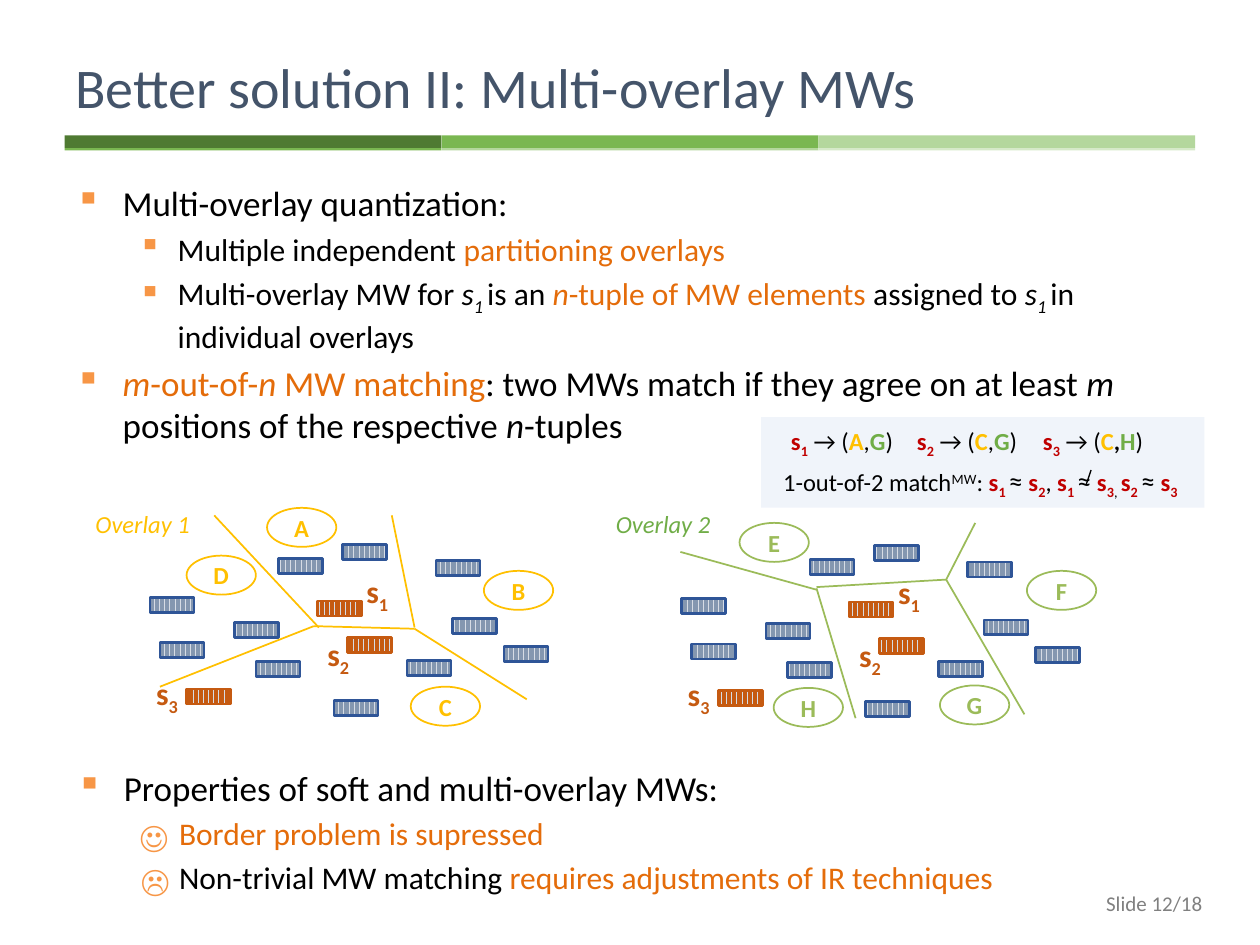
from lxml.etree import SubElement
from pptx import Presentation
from pptx.dml.color import RGBColor
from pptx.enum.dml import MSO_PATTERN
from pptx.enum.shapes import MSO_CONNECTOR, MSO_SHAPE
from pptx.enum.text import MSO_ANCHOR as ANCHOR, PP_ALIGN as ALIGN
from pptx.oxml.ns import qn
from pptx.util import Pt

ORANGE, BULLET, RUST = "E46C0A", "F79646", "C55A11"
GOLD, GREEN, OLIVE = "FFC000", "70AD47", "9BBB59"
STYLES = {
    "bold": {"bold": True},
    "italic": {"italic": True},
    "sub": {"baseline": "-25000"},
    "super": {"baseline": "30000"},
    "large": {"size": Pt(16)},
    "orange": {"colour": ORANGE},
    "red": {"colour": "C00000"},
    "gold": {"colour": GOLD},
    "green": {"colour": GREEN},
}


def paint(fill, colour):
    """Make the fill of a shape, line or font one solid colour."""
    fill.solid()
    fill.fore_color.rgb = RGBColor.from_string(colour)


def write(paragraph, runs, size, colour="000000"):
    """Add (text, style words) runs; the words are keys of STYLES."""
    for text, words in runs:
        run = paragraph.add_run()
        run.text = text
        values = {"name": "Calibri", "size": Pt(size), "colour": colour}
        for word in words.split():
            values.update(STYLES[word])
        paint(run.font.fill, values.pop("colour"))
        if "baseline" in values:
            run._r.get_or_add_rPr().set("baseline", values.pop("baseline"))
        for name, value in values.items():
            setattr(run.font, name, value)


presentation = Presentation()
presentation.slide_width, presentation.slide_height = Pt(720), Pt(540)
slide = presentation.slides.add_slide(presentation.slide_layouts[6])
shapes = slide.shapes

# Title rule: three segments, each with a thin lighter edge below
bar_width = 215.3
for column, (main, edge) in enumerate(
        [("4F7A32", "7AB751"), ("7AB751", "B4D79D"), ("B4D79D", "D6E9C9")]):
    for top, height, colour in [(77.4, 7.2, main), (84.6, 1.4, edge)]:
        bar = shapes.add_shape(MSO_SHAPE.RECTANGLE, Pt(37 + column * bar_width),
                               Pt(top), Pt(bar_width), Pt(height))
        bar.shadow.inherit = False
        paint(bar.fill, colour)
        bar.line.fill.background()

# Bulleted text
body = [
    (0, [("Multi-overlay quantization:", "")]),
    (1, [("Multiple independent ", ""), ("partitioning overlays", "orange")]),
    (1, [("Multi-overlay MW for ", ""), ("s", "italic"), ("1 ", "italic sub"),
         ("is an ", ""), ("n", "orange italic"),
         ("-tuple of MW elements ", "orange"), ("assigned to ", ""),
         ("s", "italic"), ("1 ", "italic sub"), ("in individual overlays", "")]),
    (0, [("m", "orange italic"), ("-out-of-", "orange"), ("n", "orange italic"),
         (" MW matching", "orange"),
         (": two MWs match if they agree on at least ", ""), ("m", "italic"),
         (" positions of the respective ", ""), ("n", "italic"),
         ("-tuples", "")]),
]
properties = [
    (0, [("Properties of soft and multi-overlay MWs:", "")]),
    (1, [("Border problem is supressed", "orange")]),
    (1, [("Non-trivial MW matching ", ""),
         ("requires adjustments of IR techniques", "orange")]),
]
# Size, left margin, first-line indent by level
levels = [(20, 27, -27), (18, 58.5, -22.5)]
for left, top, width, height, items, bulleted_levels in [
        (36, 100, 648, 402.5, body, (0, 1)),
        (36.7, 434.2, 642.2, 85, properties, (0,))]:
    frame = shapes.add_textbox(Pt(left), Pt(top), Pt(width), Pt(height)).text_frame
    frame.word_wrap = True
    for number, (level, runs) in enumerate(items):
        paragraph = frame.add_paragraph() if number else frame.paragraphs[0]
        size, margin, indent = levels[level]
        paragraph.level = level
        paragraph.space_before = Pt(size * 0.2)
        write(paragraph, runs, size)
        settings = paragraph._p.get_or_add_pPr()
        settings.set("marL", str(Pt(margin)))
        if level in bulleted_levels:
            settings.set("indent", str(Pt(indent)))
            bullet_colour = SubElement(settings, qn("a:buClr"))
            SubElement(bullet_colour, qn("a:srgbClr"), val=BULLET)
            SubElement(settings, qn("a:buChar"), char="▪")
        else:
            settings.set("indent", "0")

# Overlays: the same segments under two different partitionings
overlays = [
    (0, 0, GOLD,
     [(122.4, 294.5, 182.2, 358.6), (179.3, 357.8, 236.9, 359.3),
      (223.9, 294.5, 236.9, 358.6), (236.9, 359.3, 301, 399.6),
      (91.4, 392.4, 179.3, 357.8)],
     [("A", 152.6, 290.2), ("B", 276.5, 326.2),
      ("D", 106.6, 317.5), ("C", 234.7, 392.4)]),
    (303.8, 0.7, OLIVE,
     [(388.8, 315.4, 466.6, 337), (466.6, 335.5, 540.7, 331.2),
      (557.3, 298.8, 540.7, 331.2), (540.7, 331.2, 585.4, 408.2),
      (488.9, 410.4, 466.6, 336.2)],
     [("E", 422.6, 298.8), ("F", 586.8, 326.2),
      ("H", 442.1, 393.1), ("G", 537.1, 391.7)]),
]
query_segments = [(198.7, 364.3), (106.6, 393.8), (181.4, 343.4)]
other_segments = [
    (232.6, 377.3), (190.8, 400.3), (258.5, 353.5), (249.1, 320.4),
    (288, 369.4), (195.8, 311), (159.1, 319), (85.7, 341.3),
    (91.4, 367.2), (133.9, 355.7), (146.2, 378)]
segment_labels = [("1", 202.3, 324.7), ("2", 180, 360.7), ("3", 82.1, 383)]
lines = []
for shift_x, shift_y, colour, borders, cells in overlays:
    lines += [(border, colour, 1) for border in borders]
    for segments, stripe, outline in [(query_segments, RUST, RUST),
                                      (other_segments, "8497B0", "2F5597")]:
        for left, top in segments:
            segment = shapes.add_shape(MSO_SHAPE.RECTANGLE, Pt(left + shift_x),
                                       Pt(top + shift_y), Pt(25.2), Pt(8.6))
            segment.shadow.inherit = False
            segment.fill.patterned()
            segment.fill.pattern = MSO_PATTERN.DARK_VERTICAL
            segment.fill.fore_color.rgb = RGBColor.from_string(stripe)
            segment.fill.back_color.rgb = RGBColor.from_string("D6DCE5")
            paint(segment.line.fill, outline)
            segment.line.width = Pt(1.5)
    for letter, left, top in cells:
        cell = shapes.add_shape(MSO_SHAPE.OVAL, Pt(left), Pt(top), Pt(39.6), Pt(22.3))
        cell.shadow.inherit = False
        cell.fill.background()
        paint(cell.line.fill, colour)
        cell.line.width = Pt(1)
        frame = cell.text_frame
        frame.vertical_anchor = ANCHOR.MIDDLE
        for side in ("left", "top", "right", "bottom"):
            setattr(frame, f"margin_{side}", 0)
        frame.paragraphs[0].alignment = ALIGN.CENTER
        write(frame.paragraphs[0], [(letter, "bold")], 14, colour)

# Matching example: panel and two formula lines
panel = shapes.add_shape(MSO_SHAPE.RECTANGLE, Pt(434.9), Pt(238.3), Pt(253.4), Pt(51.8))
panel.shadow.inherit = False
paint(panel.fill, "DAE3F3")
panel.line.fill.background()
panel_colour = panel._element.spPr.find(".//" + qn("a:srgbClr"))
SubElement(panel_colour, qn("a:alpha"), val="38000")

frame = shapes.add_textbox(Pt(434.9), Pt(239.8), Pt(250.6), Pt(46.1)).text_frame
frame.word_wrap = True
frame.margin_left = frame.margin_right = Pt(2.9)
assignments, matches = frame.paragraphs[0], frame.add_paragraph()
for number, first, second in [("1", "A", "G"), ("2", "C", "G"), ("3", "C", "H")]:
    write(assignments, [
        ("s", "red bold"), (number, "red bold sub"), (" → (", ""),
        (first, "gold bold"), (",", "bold" if number == "3" else ""),
        (second, "green bold"), (")" if number == "3" else ")\t", "")], 14)
settings = assignments._p.get_or_add_pPr()
settings.set("marL", str(Pt(14.2)))
settings.set("indent", "0")
tabs = SubElement(settings, qn("a:tabLst"))
for position in (94.8, 174.2):
    SubElement(tabs, qn("a:tab"), pos=str(Pt(position)), algn="l")
matches.alignment = ALIGN.CENTER
matches.space_before = Pt(2.4)
write(matches, [("1-out-of-2 match", ""), ("MW", "super"), (": ", "")], 14)
for one, other, separator in [("1", "2", (", ", "")), ("1", "3", (", ", "sub")),
                              ("2", "3", None)]:
    write(matches, [("s", "red bold"), (one + " ", "red bold sub"), ("≈", "large"),
                    (" ", ""), ("s", "red bold"), (other, "red bold sub")], 14)
    if separator:
        write(matches, [separator], 14)

# Cell borders and the stroke that negates the second match
lines.append(((623.5, 268.6, 620.6, 277.2), "000000", 0.75))
for ends, colour, weight in lines:
    line = shapes.add_connector(MSO_CONNECTOR.STRAIGHT, *[Pt(value) for value in ends])
    paint(line.line.fill, colour)
    line.line.width = Pt(weight)
    SubElement(line._element.spPr, qn("a:effectLst"))

# Single-line texts
labels = [
    (36, 21.6, 648, 55.4, True, ALIGN.LEFT, 32, "44546A",
     [("Better solution II: Multi-overlay MWs", "")]),
    (524.2, 504, 169.9, 24.5, True, ALIGN.RIGHT, 12, "808080", [("Slide 12/18", "")]),
    (47.5, 287.3, 69.1, 24.5, False, ALIGN.LEFT, 14, GOLD, [("Overlay 1", "italic")]),
    (344.9, 287.3, 69.1, 24.5, False, ALIGN.LEFT, 14, GREEN, [("Overlay 2", "italic")]),
    (72.7, 463, 22.3, 28.8, True, ALIGN.LEFT, 18, BULLET, [("☺", "bold")]),
    (73.4, 488.2, 22.3, 28.8, True, ALIGN.LEFT, 18, BULLET, [("☹", "bold")]),
]
for shift_x, shift_y, *_ in overlays:
    labels += [(left + shift_x, top + shift_y, 28.1, 28.8, False, ALIGN.LEFT, 18, RUST,
                [("s", "bold"), (number, "bold sub")])
               for number, left, top in segment_labels]
for left, top, width, height, wrap, alignment, size, colour, runs in labels:
    frame = shapes.add_textbox(Pt(left), Pt(top), Pt(width), Pt(height)).text_frame
    frame.word_wrap = wrap
    frame.vertical_anchor = ANCHOR.MIDDLE
    frame.paragraphs[0].alignment = alignment
    write(frame.paragraphs[0], runs, size, colour)

presentation.save("out.pptx")
